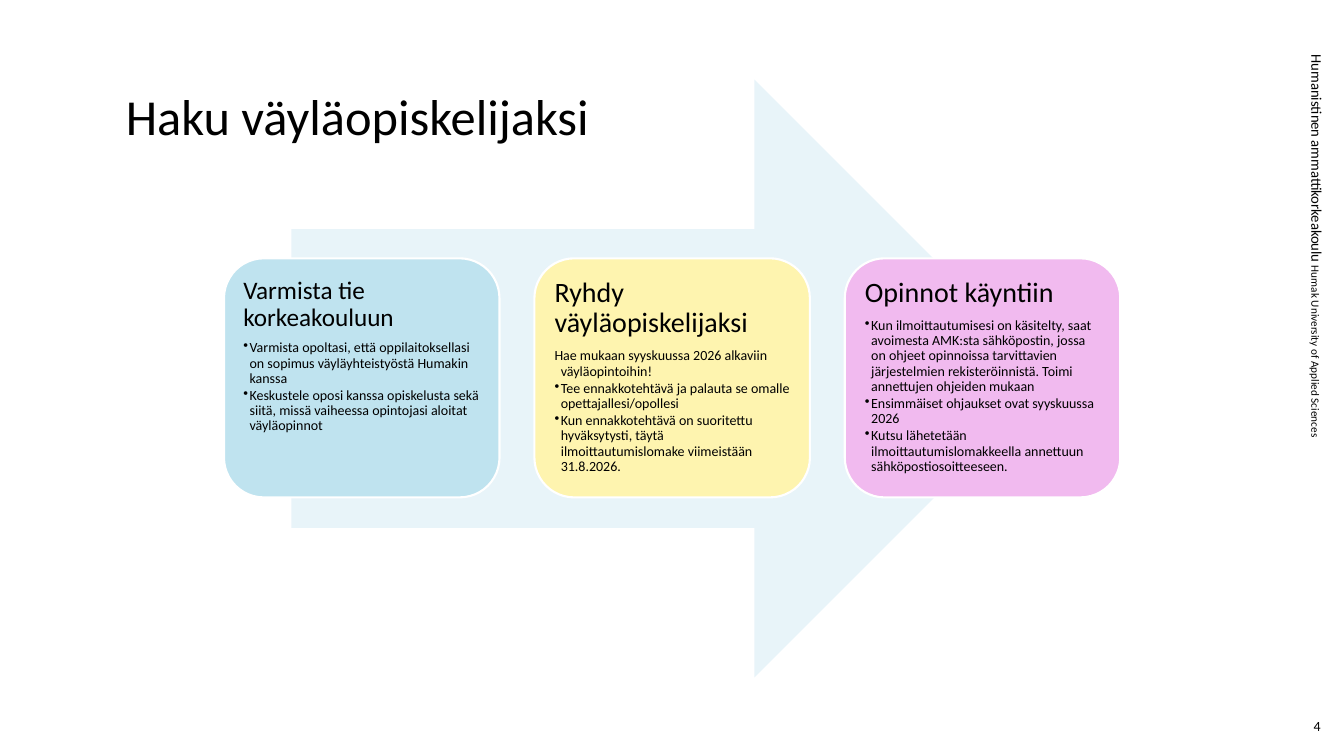
from lxml.etree import SubElement
from pptx import Presentation
from pptx.dml.color import RGBColor
from pptx.enum.shapes import MSO_SHAPE as SHAPE
from pptx.enum.text import MSO_ANCHOR as ANCHOR, PP_ALIGN as ALIGN
from pptx.oxml.ns import qn
from pptx.util import Pt


def rgb(value):
    return RGBColor.from_string(value)


class SlideBuilder:
    font = "Calibri"
    ink = "000000"
    white = "FFFFFF"
    line_spacing = 0.9
    body_size = 10
    hang = 4.5

    def __init__(self, slide):
        self.slide = slide

    def shape(self, kind, x, y, w, h, fill, outline=None):
        sp = self.slide.shapes.add_shape(kind, Pt(x), Pt(y), Pt(w), Pt(h))
        sp.shadow.inherit = False
        sp.fill.solid()
        sp.fill.fore_color.rgb = rgb(fill)
        if outline:
            sp.line.color.rgb = rgb(outline)
            sp.line.width = Pt(1.5)
        else:
            sp.line.fill.background()
        return sp

    def box(self, x, y, w, h, anchor=ANCHOR.TOP, inset=None):
        sp = self.slide.shapes.add_textbox(Pt(x), Pt(y), Pt(w), Pt(h))
        tf = sp.text_frame
        tf.word_wrap = True
        tf.vertical_anchor = anchor
        if inset is not None:
            tf.margin_left = tf.margin_right = Pt(inset)
            tf.margin_top = tf.margin_bottom = Pt(inset)
        return sp

    def run(self, p, text, size):
        r = p.add_run()
        r.text = text
        r.font.name = self.font
        r.font.size = Pt(size)
        r.font.color.rgb = rgb(self.ink)

    def body_paragraph(self, tf, text, bullet):
        """Add a hanging paragraph, with or without a bullet sign."""
        p = tf.add_paragraph()
        p.level = 1
        pPr = p._p.get_or_add_pPr()
        pPr.set("marL", str(Pt(self.hang)))
        pPr.set("indent", str(-Pt(self.hang)))
        if bullet:
            SubElement(pPr, qn("a:buChar")).set("char", "•")
        else:
            SubElement(pPr, qn("a:buNone"))
        p.line_spacing = self.line_spacing
        p.space_after = Pt(0.15 * self.body_size)
        self.run(p, text, self.body_size)

    def card(self, x, y, w, h, fill, heading, size, body):
        """Draw a rounded step with its heading and body text."""
        self.shape(SHAPE.ROUNDED_RECTANGLE, x, y, w, h, fill, self.white)
        pad = 8.4
        tf = self.box(x + pad, y + pad, w - 2 * pad, h - 2 * pad,
                      inset=0.3 * size).text_frame
        p = tf.paragraphs[0]
        p.line_spacing = self.line_spacing
        p.space_after = Pt(0.35 * size)
        self.run(p, heading, size)
        for text, bullet in body:
            self.body_paragraph(tf, text, bullet)

    def title(self, text):
        p = self.box(82.8, 62, 748, 62).text_frame.paragraphs[0]
        p.line_spacing = self.line_spacing
        self.run(p, text, 36)

    def side_label(self, name, translation):
        sp = self.box(722.2, 239.8, 436.3, 20.9)
        sp.rotation = 90
        p = sp.text_frame.paragraphs[0]
        self.run(p, name + " ", 10.5)
        self.run(p, translation, 8)

    def page_number(self, text):
        p = self.box(890.6, 504, 59.8, 28.8, ANCHOR.MIDDLE).text_frame.paragraphs[0]
        p.alignment = ALIGN.RIGHT
        self.run(p, text, 10)


STEPS = [
    ("BFE3EF", "Varmista tie korkeakouluun", 18, [
        ("Varmista opoltasi, että oppilaitoksellasi on sopimus "
         "väyläyhteistyöstä Humakin kanssa", True),
        ("Keskustele oposi kanssa opiskelusta sekä siitä, missä vaiheessa "
         "opintojasi aloitat väyläopinnot", True),
    ]),
    ("FEF4AF", "Ryhdy väyläopiskelijaksi", 20, [
        ("Hae mukaan syyskuussa 2026 alkaviin väyläopintoihin!", False),
        ("Tee ennakkotehtävä ja palauta se omalle opettajallesi/opollesi", True),
        ("Kun ennakkotehtävä on suoritettu hyväksytysti, täytä "
         "ilmoittautumislomake viimeistään 31.8.2026.", True),
    ]),
    ("F1BAEF", "Opinnot käyntiin", 20, [
        ("Kun ilmoittautumisesi on käsitelty, saat avoimesta AMK:sta "
         "sähköpostin, jossa on ohjeet opinnoissa tarvittavien järjestelmien "
         "rekisteröinnistä. Toimi annettujen ohjeiden mukaan", True),
        ("Ensimmäiset ohjaukset ovat syyskuussa 2026", True),
        ("Kutsu lähetetään ilmoittautumislomakkeella annettuun "
         "sähköpostiosoitteeseen.", True),
    ]),
]


def main():
    prs = Presentation()
    prs.slide_width, prs.slide_height = Pt(960), Pt(540)
    s = SlideBuilder(prs.slides.add_slide(prs.slide_layouts[6]))

    s.side_label("Humanistinen ammattikorkeakoulu",
                 "Humak University of Applied Sciences")
    s.title("Haku väyläopiskelijaksi")
    s.page_number("4")
    s.shape(SHAPE.RIGHT_ARROW, 208.1, 56.9, 544.3, 427, "E8F4F9")
    left, step = 160, 221.7
    for i, (fill, heading, size, body) in enumerate(STEPS):
        s.card(left + i * step, 184.5, 196.8, 170.8, fill, heading, size, body)

    prs.save("out.pptx")


if __name__ == "__main__":
    main()
